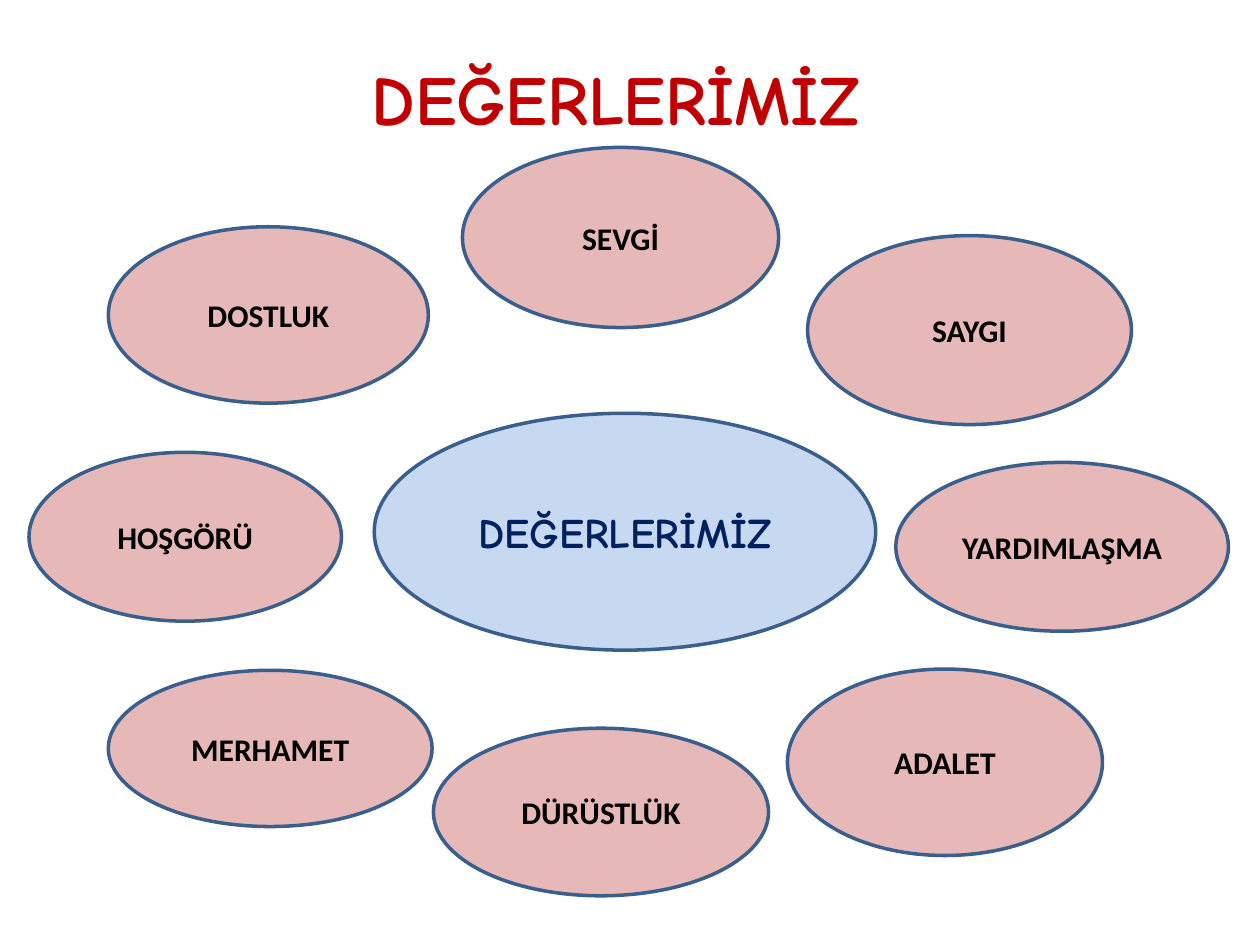
from dataclasses import dataclass

from pptx import Presentation
from pptx.dml.color import RGBColor
from pptx.enum.shapes import MSO_SHAPE
from pptx.enum.text import MSO_ANCHOR, PP_ALIGN
from pptx.util import Inches, Pt


@dataclass(frozen=True)
class Theme:
    value_fill: RGBColor = RGBColor.from_string("E6B9B8")
    center_fill: RGBColor = RGBColor.from_string("C6D9F1")
    outline: RGBColor = RGBColor.from_string("3A5F8C")
    value_text: RGBColor = RGBColor.from_string("000000")
    center_text: RGBColor = RGBColor.from_string("002060")
    title_text: RGBColor = RGBColor.from_string("C00000")
    value_size: Pt = Pt(18)
    center_size: Pt = Pt(24)
    title_size: Pt = Pt(40)
    outline_width: Pt = Pt(2)
    body_font: str = "Calibri"
    display_font: str = "Comic Neue"


theme = Theme()
value_format = {"name": theme.body_font, "size": theme.value_size, "bold": True}
center_format = {"name": theme.display_font, "size": theme.center_size, "bold": True}
title_format = {"name": theme.display_font, "size": theme.title_size, "bold": True}


def write_text(shape, text, font_format, color):
    """Put one centred, formatted line of text in a shape."""
    shape.text_frame.word_wrap = True
    paragraph = shape.text_frame.paragraphs[0]
    paragraph.alignment = PP_ALIGN.CENTER
    run = paragraph.add_run()
    run.text = text
    for name, value in font_format.items():
        setattr(run.font, name, value)
    run.font.color.rgb = color


def add_ellipse(slide, box, fill, text, font_format, color):
    """Add an outlined ellipse with a centred label."""
    shape = slide.shapes.add_shape(MSO_SHAPE.OVAL, *map(Inches, box))
    shape.shadow.inherit = False
    shape.fill.solid()
    shape.fill.fore_color.rgb = fill
    shape.line.color.rgb = theme.outline
    shape.line.width = theme.outline_width
    shape.text_frame.vertical_anchor = MSO_ANCHOR.MIDDLE
    write_text(shape, text, font_format, color)


presentation = Presentation()
presentation.slide_width = Inches(10)
presentation.slide_height = Inches(7.5)
slide = presentation.slides.add_slide(presentation.slide_layouts[6])

# Values around the centre, clockwise from the top: left, top, width, height
values = {
    "SEVGİ": (3.67, 1.17, 2.51, 1.43),
    "SAYGI": (6.41, 1.87, 2.57, 1.5),
    "YARDIMLAŞMA": (7.11, 3.67, 2.64, 1.34),
    "ADALET": (6.25, 5.31, 2.5, 1.48),
    "DÜRÜSTLÜK": (3.44, 5.78, 2.66, 1.33),
    "MERHAMET": (0.86, 5.32, 2.57, 1.24),
    "HOŞGÖRÜ": (0.23, 3.59, 2.48, 1.34),
    "DOSTLUK": (0.86, 1.8, 2.54, 1.4),
}
for label, box in values.items():
    add_ellipse(slide, box, theme.value_fill, label, value_format, theme.value_text)

# Central idea
add_ellipse(slide, (2.97, 3.28, 3.98, 1.88), theme.center_fill,
            "DEĞERLERİMİZ", center_format, theme.center_text)

# Title
title = slide.shapes.add_textbox(Inches(2.27), Inches(0.39), Inches(5.23), Inches(0.77))
write_text(title, "DEĞERLERİMİZ", title_format, theme.title_text)

presentation.save("out.pptx")
